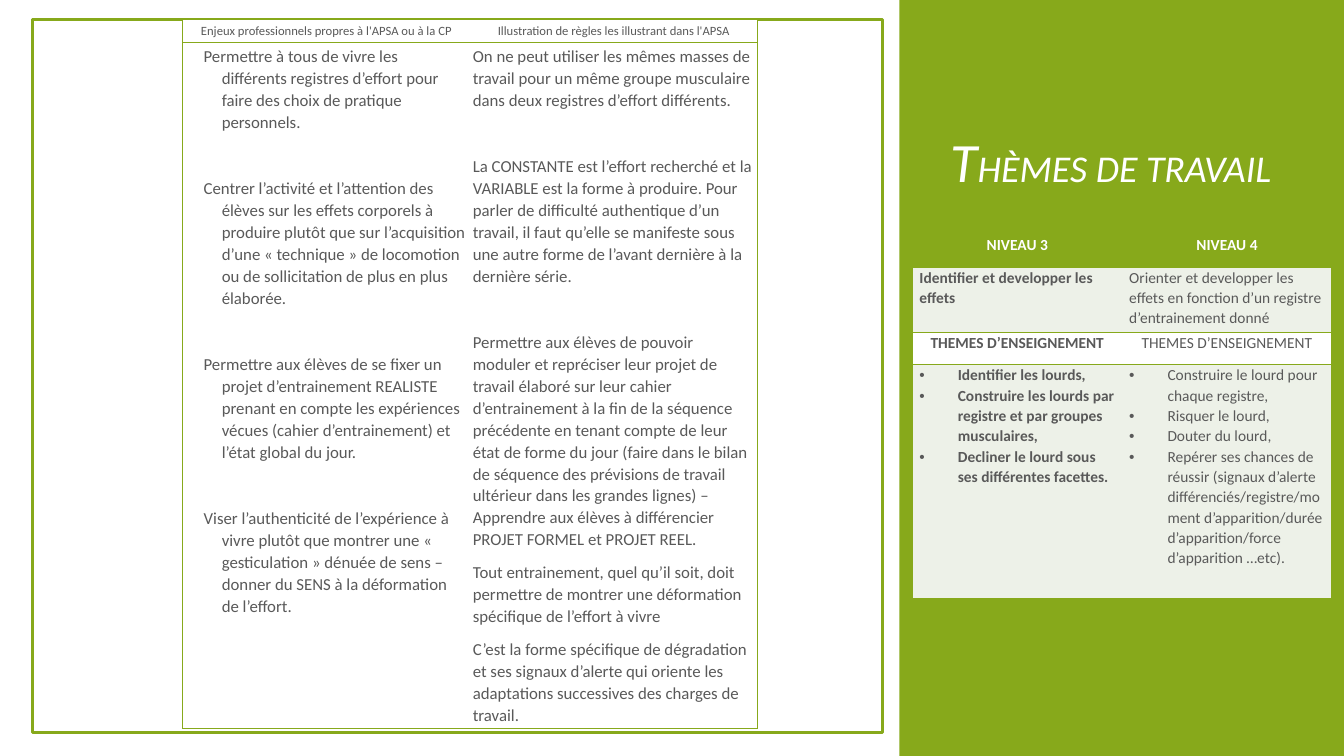
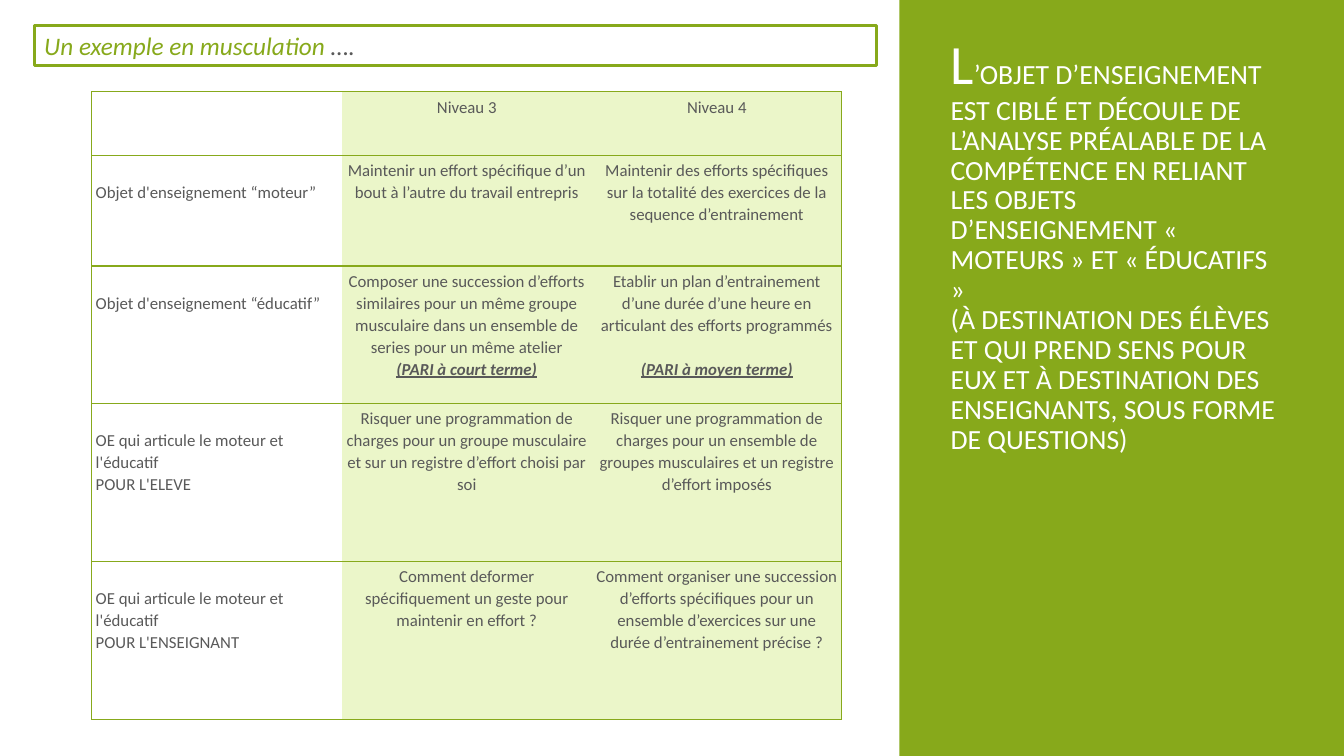
"""Build two slides on training themes, each with a green title panel and tables."""
from dataclasses import dataclass

from pptx import Presentation, dml, util as u
from pptx.dml.color import RGBColor
from pptx.enum import shapes, text
from pptx.oxml import ns
from pptx.shapes.autoshape import Shape
from pptx.slide import Slide
from pptx.table import _Cell
from pptx.text.text import TextFrame, _Paragraph, _Run
from lxml import etree

GREEN = RGBColor(0x87, 0xA9, 0x1B)
PALE_GREEN = RGBColor(0xEB, 0xF6, 0xC9)
PALE_GREY = RGBColor(0xED, 0xF1, 0xE8)
GREY = RGBColor(0x59, 0x59, 0x59)
WHITE = RGBColor(0xFF, 0xFF, 0xFF)
FONT = "Calibri"
LEFT, CENTER = text.PP_ALIGN.LEFT, text.PP_ALIGN.CENTER


@dataclass(frozen=True)
class Box:
    """Position and size in inches."""
    left: float
    top: float
    width: float
    height: float

    def lengths(self) -> tuple[u.Length, ...]:
        """Return the four values as lengths."""
        return tuple(u.Inches(v) for v in (self.left, self.top, self.width, self.height))


@dataclass(frozen=True)
class Line:
    """One paragraph of a table cell."""
    words: str
    before: float = 0
    wager: bool = False


@dataclass(frozen=True)
class Entry:
    """Content and look of one table cell."""
    lines: tuple[Line, ...] = ()
    fill: RGBColor = WHITE
    size: float = 12
    color: RGBColor = GREY
    bold: bool = False
    align: text.PP_ALIGN = LEFT
    after: float = 0
    margin: float = 0
    indent: float = 0
    bullet: bool = False
    inset_x: float = 0.04
    inset_top: float = 0.04


def lines(*words: str, gap: float = 0) -> tuple[Line, ...]:
    """Make paragraphs with an equal extra gap between them."""
    return tuple(Line(w, gap if i else 0) for i, w in enumerate(words))


def style_run(run: _Run, size: float, color: RGBColor, bold: bool = False,
              italic: bool = False) -> None:
    """Set the font of a run."""
    run.font.name, run.font.size = FONT, u.Pt(size)
    run.font.color.rgb, run.font.bold, run.font.italic = color, bold, italic


def indent(paragraph: _Paragraph, margin: float, first: float, bullet: bool) -> None:
    """Set a hanging indent and an optional bullet."""
    props = paragraph._p.get_or_add_pPr()
    props.set("marL", str(u.Inches(margin)))
    props.set("indent", str(u.Inches(first)))
    if bullet:
        etree.SubElement(props, ns.qn("a:buFont"), typeface="Arial")
        etree.SubElement(props, ns.qn("a:buChar"), char="•")


def set_borders(cell: _Cell, sides: str) -> None:
    """Draw green borders on the given sides and clear the others."""
    props = cell._tc.get_or_add_tcPr()
    for side in "LRTB":
        border = etree.SubElement(props, ns.qn(f"a:ln{side}"), w=str(u.Pt(1)))
        if side in sides:
            paint = etree.SubElement(border, ns.qn("a:solidFill"))
            etree.SubElement(paint, ns.qn("a:srgbClr"), val=str(GREEN))
        else:
            etree.SubElement(border, ns.qn("a:noFill"))


def fill_cell(cell: _Cell, entry: Entry) -> None:
    """Write and format one table cell."""
    cell.fill.solid()
    cell.fill.fore_color.rgb = entry.fill
    cell.margin_left = cell.margin_right = u.Inches(entry.inset_x)
    cell.margin_top = u.Inches(entry.inset_top)
    cell.margin_bottom = u.Inches(0)
    cell.text_frame.text = "\n".join(line.words for line in entry.lines)
    for line, paragraph in zip(entry.lines, cell.text_frame.paragraphs):
        paragraph.alignment = entry.align
        paragraph.line_spacing = 1.07
        paragraph.space_before, paragraph.space_after = u.Pt(line.before), u.Pt(entry.after)
        indent(paragraph, entry.margin, entry.indent, entry.bullet)
        for run in paragraph.runs:
            style_run(run, entry.size, entry.color, entry.bold or line.wager, line.wager)
            run.font.underline = line.wager


def add_grid(slide: Slide, box: Box, heights: list[float], rows: list[list[Entry]]) -> None:
    """Add a table with equal columns, outer borders and row rules."""
    count = len(rows[0])
    table = slide.shapes.add_table(len(rows), count, *box.lengths()).table
    table.first_row = table.horz_banding = False
    for column in table.columns:
        column.width = u.Inches(box.width / count)
    for r, (height, row) in enumerate(zip(heights, rows)):
        table.rows[r].height = u.Inches(height)
        for c, entry in enumerate(row):
            sides = "TB" + "L" * (c == 0) + "R" * (c == count - 1)
            set_borders(table.cell(r, c), sides)
            fill_cell(table.cell(r, c), entry)


def add_frame(slide: Slide, box: Box) -> Shape:
    """Add an unfilled rectangle with a green outline."""
    frame = slide.shapes.add_shape(shapes.MSO_SHAPE.RECTANGLE, *box.lengths())
    frame.shadow.inherit = False
    frame.fill.background()
    frame.line.color.rgb, frame.line.width = GREEN, u.Pt(2.25)
    return frame


def add_runs(paragraph: _Paragraph, *words: str) -> list[_Run]:
    """Add several runs to a paragraph."""
    for part in words:
        paragraph.add_run().text = part
    return list(paragraph.runs)


def add_panel(slide: Slide, box: Box, title: str, size: float, italic: bool = False) -> None:
    """Add the green side panel and its title with a large initial."""
    panel = slide.shapes.add_shape(shapes.MSO_SHAPE.RECTANGLE, *Box(8.92, 0, 4.42, 7.5).lengths())
    panel.shadow.inherit = False
    panel.fill.solid()
    panel.fill.fore_color.rgb = GREEN
    panel.line.fill.background()
    frame: TextFrame = slide.shapes.add_textbox(*box.lengths()).text_frame
    frame.word_wrap = True
    frame.vertical_anchor = text.MSO_ANCHOR.BOTTOM
    opening, *others = title.split("\n")
    add_runs(frame.paragraphs[0], opening[0], opening[1:])
    for words in others:
        add_runs(frame.add_paragraph(), words)
    for paragraph in frame.paragraphs:
        paragraph.line_spacing = 0.9
        for run in paragraph.runs:
            style_run(run, size, WHITE, italic=italic)
    frame.paragraphs[0].runs[0].font.size = u.Pt(39.6)


def build_themes(slide: Slide) -> None:
    """Build the slide on working themes."""
    add_panel(slide, Box(9.33, 0.79, 3.42, 1.19), "THÈMES DE TRAVAIL", 27, italic=True)
    add_frame(slide, Box(0.32, 0.19, 8.43, 7.08))

    gap = 23.7
    stakes = lines(
        "Permettre à tous de vivre les différents registres d’effort pour faire des choix de "
        "pratique personnels.",
        "Centrer l’activité et l’attention des élèves sur les effets corporels à produire plutôt "
        "que sur l’acquisition d’une « technique » de locomotion ou de sollicitation de plus en "
        "plus élaborée.",
        "Permettre aux élèves de se fixer un projet d’entrainement REALISTE prenant en compte les "
        "expériences vécues (cahier d’entrainement) et l’état global du jour.",
        "Viser l’authenticité de l’expérience à vivre plutôt que montrer une « gesticulation » "
        "dénuée de sens – donner du SENS à la déformation de l’effort.", gap=gap)
    rules = lines(
        "On ne peut utiliser les mêmes masses de travail pour un même groupe musculaire dans deux "
        "registres d’effort différents.",
        "La CONSTANTE est l’effort recherché et la VARIABLE est la forme à produire. Pour parler "
        "de difficulté authentique d’un travail, il faut qu’elle se manifeste sous une autre "
        "forme de l’avant dernière à la dernière série.",
        "Permettre aux élèves de pouvoir moduler et repréciser leur projet de travail élaboré sur "
        "leur cahier d’entrainement à la fin de la séquence précédente en tenant compte de leur "
        "état de forme du jour (faire dans le bilan de séquence des prévisions de travail "
        "ultérieur dans les grandes lignes) –Apprendre aux élèves à différencier PROJET FORMEL et "
        "PROJET REEL.", gap=gap)
    rules += lines(
        "Tout entrainement, quel qu’il soit, doit permettre de montrer une déformation spécifique "
        "de l’effort à vivre",
        "C’est la forme spécifique de dégradation et ses signaux d’alerte qui oriente les "
        "adaptations successives des charges de travail.")
    headings = ["Enjeux professionnels propres à l'APSA ou à la CP",
                "Illustration de règles les illustrant dans l'APSA"]
    add_grid(slide, Box(1.81, 0.19, 5.7, 7.04), [0.23, 6.81], [
        [Entry(lines(h), size=9, align=CENTER, inset_x=0.03, inset_top=0.03) for h in headings],
        [Entry(stakes, after=8, margin=0.36, indent=-0.18, inset_x=0.03, inset_top=0.03),
         Entry(rules, after=8, inset_x=0.03, inset_top=0.03)],
    ])

    def level(words: tuple[Line, ...], bold: bool, **look) -> Entry:
        """Make a cell of the level table."""
        return Entry(words, size=11, bold=bold, inset_x=0.07, inset_top=0, **look)

    aims = ["Identifier et developper les effets",
            "Orienter et developper les effets en fonction d’un registre d’entrainement donné"]
    themes = [
        lines("Identifier les lourds,",
              "Construire les lourds par registre et par groupes musculaires,",
              "Decliner le lourd sous ses différentes facettes."),
        lines("Construire le lourd pour chaque registre,", "Risquer le lourd,",
              "Douter du lourd,",
              "Repérer ses chances de réussir (signaux d’alerte "
              "différenciés/registre/moment d’apparition/durée d’apparition/force "
              "d’apparition …etc)."),
    ]
    bolds = (True, False)
    add_grid(slide, Box(9.05, 2.33, 4.16, 3.61), [0.32, 0.65, 0.32, 2.32], [
        [level(lines(f"NIVEAU {n}"), True, fill=GREEN, color=WHITE, align=CENTER) for n in (3, 4)],
        [level(lines(aim), bold, fill=PALE_GREY) for aim, bold in zip(aims, bolds)],
        [level(lines("THEMES D’ENSEIGNEMENT"), bold, align=CENTER) for bold in bolds],
        [level(theme, bold, fill=PALE_GREY, margin=0.38, indent=-0.38, bullet=True)
         for theme, bold in zip(themes, bolds)],
    ])


def build_example(slide: Slide) -> None:
    """Build the slide with the weight training example."""
    add_panel(slide, Box(9.33, 0.4, 3.42, 4.17),
              "L’OBJET D’ENSEIGNEMENT EST CIBLÉ ET DÉCOULE DE L’ANALYSE PRÉALABLE DE LA "
              "COMPÉTENCE EN RELIANT LES OBJETS D’ENSEIGNEMENT « MOTEURS » ET « ÉDUCATIFS »\n"
              "(À DESTINATION DES ÉLÈVES ET QUI PREND SENS POUR EUX ET À DESTINATION DES "
              "ENSEIGNANTS, SOUS FORME DE QUESTIONS)", 19.8)
    banner = add_frame(slide, Box(0.34, 0.25, 8.35, 0.4)).text_frame
    banner.word_wrap = True
    banner.vertical_anchor = text.MSO_ANCHOR.TOP
    banner.paragraphs[0].alignment = LEFT
    subject, dots = add_runs(banner.paragraphs[0], "Un exemple en musculation ", "….")
    style_run(subject, 18, GREEN, italic=True)
    style_run(dots, 18, GREY)

    joint = "OE qui articule le moteur et l'éducatif"
    content = [
        ((), lines("Niveau 3"), lines("Niveau 4")),
        (lines("Objet d'enseignement “moteur”"),
         lines("Maintenir un effort spécifique d’un bout à l’autre du travail entrepris"),
         lines("Maintenir des efforts spécifiques sur la totalité des exercices de la sequence "
               "d’entrainement")),
        (lines("Objet d'enseignement “éducatif”"),
         (Line("Composer une succession d’efforts similaires pour un même groupe musculaire dans "
               "un ensemble de series pour un même atelier"),
          Line("(PARI à court terme)", wager=True)),
         (Line("Etablir un plan d’entrainement d’une durée d’une heure en articulant des efforts "
               "programmés"),
          Line("(PARI à moyen terme)", before=15.7, wager=True))),
        (lines(joint, "POUR L'ELEVE"),
         lines("Risquer une programmation de charges pour un groupe musculaire et sur un registre "
               "d’effort choisi par soi"),
         lines("Risquer une programmation de charges pour un ensemble de groupes musculaires et "
               "un registre d’effort imposés")),
        (lines(joint, "POUR L'ENSEIGNANT"),
         lines("Comment deformer spécifiquement un geste pour maintenir en effort ?"),
         lines("Comment organiser une succession d’efforts spécifiques pour un ensemble "
               "d’exercices sur une durée d’entrainement précise ?")),
    ]
    add_grid(slide, Box(0.91, 0.91, 7.44, 6.23), [0.63, 1.1, 1.36, 1.57, 1.57], [
        [Entry(label, inset_top=0.26)]
        + [Entry(goal, fill=PALE_GREEN, align=CENTER) for goal in goals]
        for label, *goals in content
    ])


def main() -> None:
    """Create and save the presentation."""
    deck = Presentation()
    deck.slide_width, deck.slide_height = u.Inches(13.33), u.Inches(7.5)
    for build in (build_themes, build_example):
        build(deck.slides.add_slide(deck.slide_layouts[6]))
    deck.save("out.pptx")


if __name__ == "__main__":
    main()
